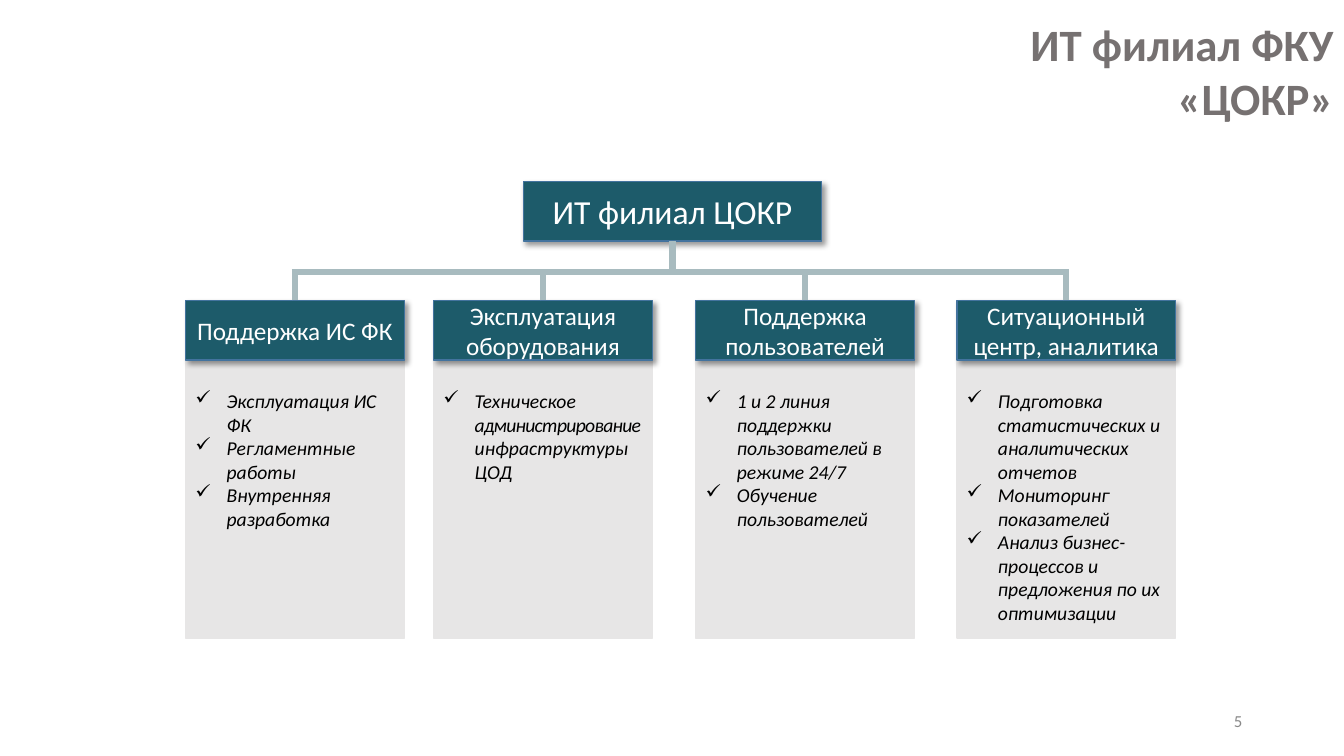
"""Build the organisation chart slide of an IT branch."""
from lxml.etree import SubElement as Sub
from pptx import Presentation
from pptx.dml.color import RGBColor as Rgb
from pptx.enum.shapes import MSO_CONNECTOR as Conn, MSO_SHAPE as Form
from pptx.enum.text import MSO_ANCHOR as Anchor, MSO_AUTO_SIZE as Fit, PP_ALIGN as Align
from pptx.oxml.ns import qn
from pptx.util import Inches, Pt

HUES = {"title": "767171", "head": "1D5B6A", "edge": "43739E", "panel": "E7E6E6",
        "rail": "A8BBBF", "page": "898989", "white": "FFFFFF", "black": "000000"}
FONT = "Calibri"
WIDE = 2.17
RAIL = 2.7
UNITS = [
    (1.84, "Поддержка ИС ФК",
     [["Эксплуатация ИС ФК"], ["Регламентные работы"], ["Внутренняя разработка"]]),
    (4.3, "Эксплуатация оборудования",
     [["Техническое ", ("администрирование", -50), " инфраструктуры ЦОД"]]),
    (6.9, "Поддержка пользователей",
     [["1 и 2 линия поддержки пользователей в режиме 24/7"], ["Обучение пользователей"]]),
    (9.49, "Ситуационный центр, аналитика",
     [["Подготовка статистических и аналитических отчетов"], ["Мониторинг показателей"],
      ["Анализ бизнес-процессов и предложения по их оптимизации"]]),
]


def hue(name):
    return Rgb.from_string(HUES[name])


def put(para, text, size, color, bold=False, slant=False, track=None):
    run = para.add_run()
    run.text = text
    font = run.font
    font.name, font.size = FONT, Pt(size)
    font.bold, font.italic = bold, slant
    font.color.rgb = hue(color)
    if track:
        run._r.get_or_add_rPr().set("spc", str(track))


def block(slide, area, fill, edge):
    box = slide.shapes.add_shape(Form.RECTANGLE, *map(Inches, area))
    box.shadow.inherit = False
    box.fill.solid()
    box.fill.fore_color.rgb = hue(fill)
    box.line.color.rgb = hue(edge)
    box.line.width = Pt(1)
    box.text_frame.word_wrap = True
    return box


def shade(box):
    glow = Sub(box._element.spPr.find(qn("a:effectLst")), qn("a:outerShdw"),
               blurRad=str(Pt(4)), dist=str(Pt(3)), dir="2700000",
               algn="tl", rotWithShape="0")
    tint = Sub(glow, qn("a:srgbClr"), val=HUES["black"])
    Sub(tint, qn("a:alpha"), val="40000")


def head(slide, area, text, size):
    box = block(slide, area, "head", "edge")
    shade(box)
    frame = box.text_frame
    frame.vertical_anchor = Anchor.MIDDLE
    para = frame.paragraphs[0]
    para.alignment = Align.CENTER
    put(para, text, size, "white")
    return box


def tick(para):
    props = para._p.get_or_add_pPr()
    props.set("marL", str(Inches(0.31)))
    props.set("indent", str(Inches(-0.31)))
    Sub(props, qn("a:buChar"), char="✓")


def panel(slide, area, items):
    frame = block(slide, area, "panel", "panel").text_frame
    frame.vertical_anchor = Anchor.TOP
    frame.margin_top = Inches(0.29)
    for spot, parts in enumerate(items):
        para = frame.add_paragraph() if spot else frame.paragraphs[0]
        para.alignment = Align.LEFT
        tick(para)
        for part in parts:
            text, track = (part, None) if isinstance(part, str) else part
            put(para, text, 14, "black", slant=True, track=track)


def line(slide, start, end):
    bar = slide.shapes.add_connector(Conn.STRAIGHT, *map(Inches, start + end))
    bar.line.color.rgb = hue("rail")
    bar.line.width = Pt(4.6)
    Sub(bar._element.spPr, qn("a:effectLst"))
    return bar


def drop(slide, box, side):
    mid = (box.left + box.width // 2) / Inches(1)
    bar = line(slide, (mid, RAIL), (mid, RAIL))
    bar.begin_connect(box, side)


def title(slide, text):
    box = slide.shapes.title
    box.left, box.top, box.width, box.height = map(Inches, (8.73, 0.12, 4.6, 1.18))
    frame = box.text_frame
    frame.word_wrap = True
    frame.auto_size = Fit.NONE
    frame.vertical_anchor = Anchor.TOP
    para = frame.paragraphs[0]
    para.alignment = Align.RIGHT
    put(para, text, 32, "title", bold=True)


def page(slide, text):
    frame = slide.shapes.add_textbox(*map(Inches, (9.42, 6.95, 3, 0.4))).text_frame
    frame.word_wrap = True
    frame.vertical_anchor = Anchor.MIDDLE
    para = frame.paragraphs[0]
    para.alignment = Align.RIGHT
    put(para, text, 12, "page")


def main():
    deck = Presentation()
    deck.slide_width, deck.slide_height = Inches(13.33), Inches(7.5)
    slide = deck.slides.add_slide(deck.slide_layouts[5])
    title(slide, "ИТ филиал ФКУ «ЦОКР»")
    page(slide, "5")
    root = head(slide, (5.19, 1.8, 2.96, 0.59), "ИТ филиал ЦОКР", 24)
    drop(slide, root, 2)
    for left, name, items in UNITS:
        panel(slide, (left, 3.57, WIDE, 2.76), items)
        drop(slide, head(slide, (left, 2.98, WIDE, 0.59), name, 18), 0)
    first, last = (UNITS[end][0] + WIDE / 2 for end in (0, -1))
    line(slide, (first - 0.03, RAIL), (last + 0.03, RAIL))
    deck.save("out.pptx")


if __name__ == "__main__":
    main()
